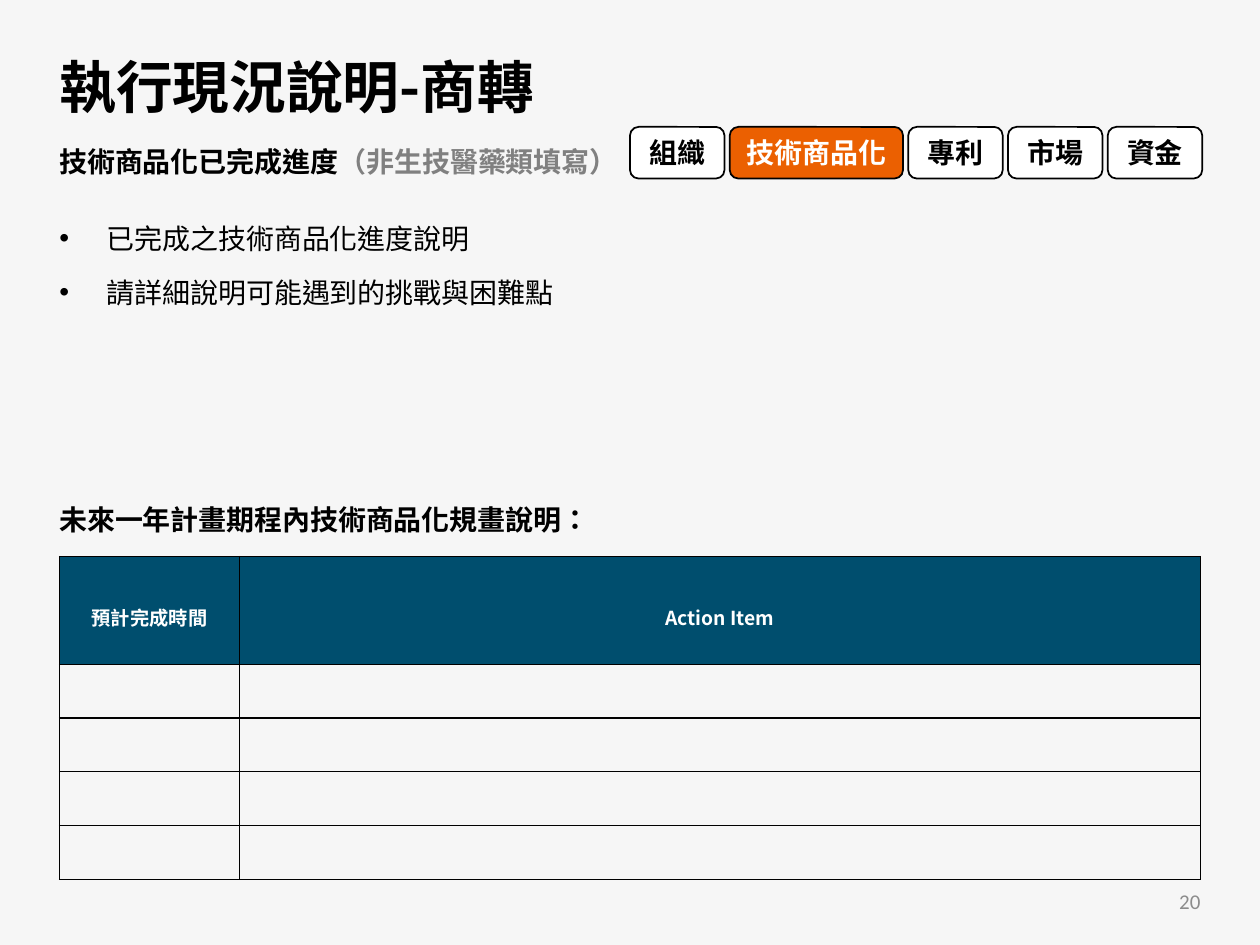
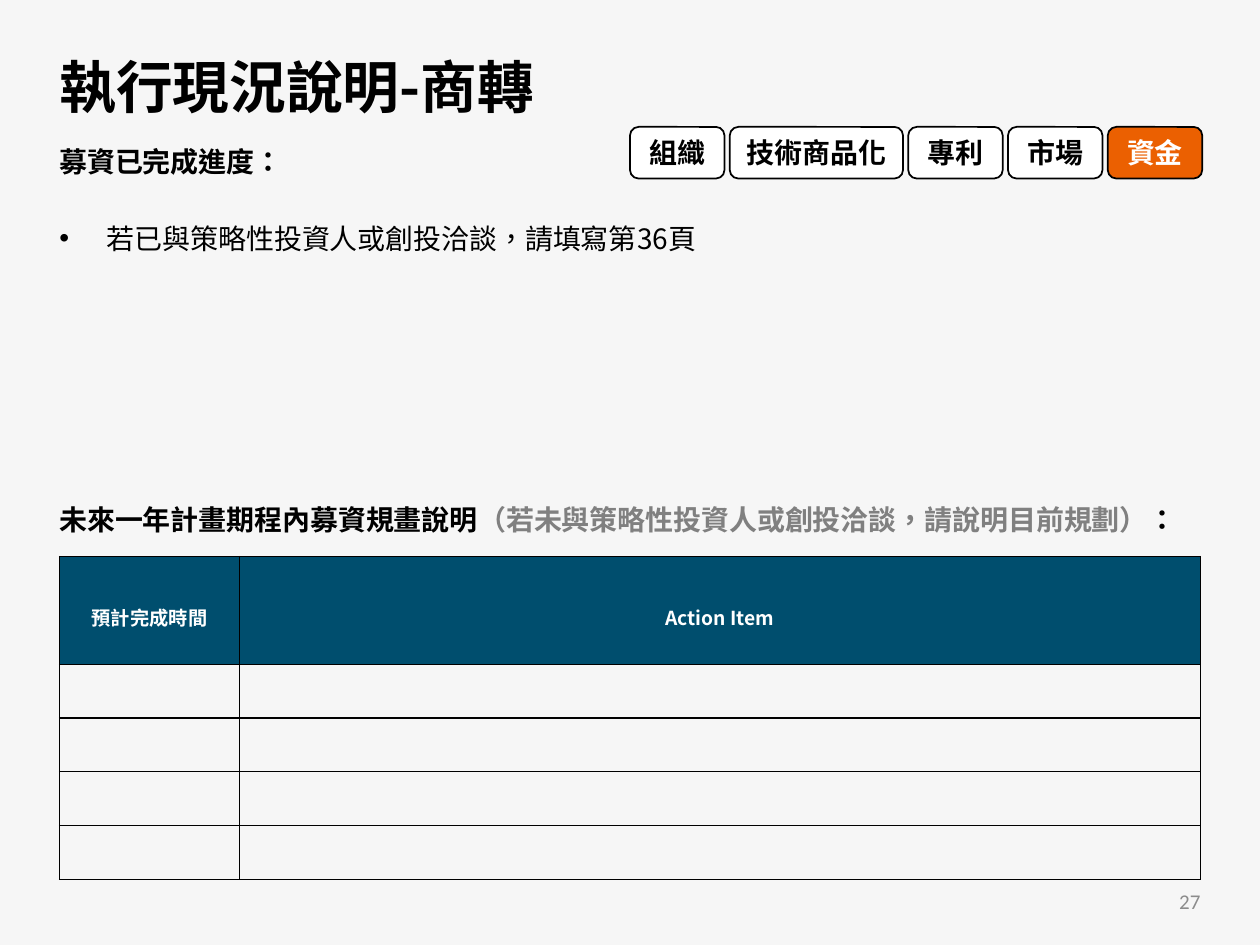
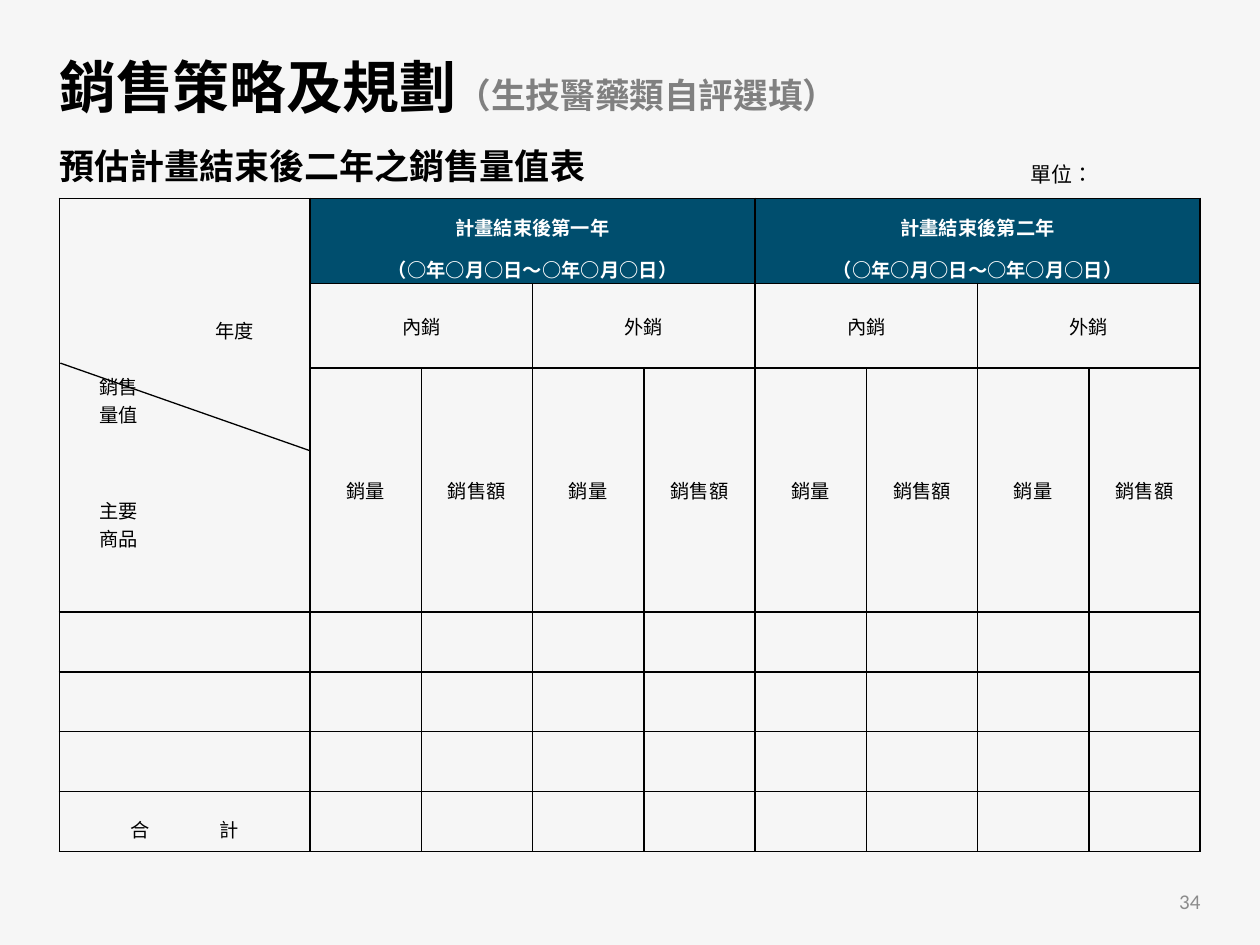
from itertools import groupby

from lxml import etree
from pptx import Presentation
from pptx import util as u
from pptx.dml import color
from pptx.enum import shapes, text
from pptx.oxml import ns

FONT = "Noto Sans CJK SC"
BLACK, WHITE, GRAY = "000000", "FFFFFF", "808080"
PAPER, NAVY, ORANGE, PAGE_GRAY = "F6F6F6", "004E6E", "EB6001", "8C8C8C"
LEFT, CENTER, RIGHT = text.PP_ALIGN.LEFT, text.PP_ALIGN.CENTER, text.PP_ALIGN.RIGHT
TOP, MIDDLE = text.MSO_ANCHOR.TOP, text.MSO_ANCHOR.MIDDLE
TEXT_LEFT, TABLE_LEFT = 26.8, 34
TAGS = ["組織", "技術商品化", "專利", "市場", "資金"]
TITLE = "執行現況說明-商轉"


def rgb(value):
    return color.RGBColor.from_string(value)


def box(left, top, width, height):
    return [u.Pt(value) for value in (left, top, width, height)]


def write(paragraph, content, size=16, ink=BLACK, bold=False, font=FONT, spacing=0):
    run = paragraph.add_run()
    run.text = content
    run.font.size, run.font.bold, run.font.name = u.Pt(size), bold, font
    run.font.color.rgb = rgb(ink)
    properties = run._r.get_or_add_rPr()
    properties.set("lang", "zh-TW")
    if spacing:
        properties.set("spc", str(round(spacing * 100)))
    etree.SubElement(properties, ns.qn("a:ea"), typeface=font)


def arrange(paragraph, align=LEFT, line=1, before=0, after=0, indent=0, hanging=0):
    paragraph.alignment, paragraph.line_spacing = align, line
    paragraph.space_before, paragraph.space_after = u.Pt(before), u.Pt(after)
    properties = paragraph._p.get_or_add_pPr()
    properties.set("marL", str(u.Pt(indent)))
    properties.set("indent", str(-u.Pt(hanging)))


class Deck:
    def __init__(self):
        self.presentation = Presentation()
        self.presentation.slide_width = u.Pt(720)
        self.presentation.slide_height = u.Pt(540)
        fill = self.presentation.slide_master.background.fill
        fill.solid()
        fill.fore_color.rgb = rgb(PAPER)
        self.slide = None

    def start(self, layout, page, title, note=""):
        self.slide = self.presentation.slides.add_slide(self.presentation.slide_layouts[layout])
        shape = self.slide.shapes.title
        shape.left, shape.top, shape.width, shape.height = box(TEXT_LEFT, 16.4, 666, 58)
        frame = shape.text_frame
        frame.auto_size, frame.vertical_anchor = text.MSO_AUTO_SIZE.NONE, MIDDLE
        paragraph = frame.paragraphs[0]
        arrange(paragraph, line=1.2)
        write(paragraph, title, size=32.4, bold=True)
        if note:
            write(paragraph, note, size=19.8, ink=GRAY, bold=True)
        self.label([(page, PAGE_GRAY)], 531, 500.5, 162, 28.8, size=12,
                   font="Calibri", align=RIGHT, anchor=MIDDLE)

    def label(self, parts, left, top, width, height, align=LEFT, anchor=TOP, **style):
        frame = self.slide.shapes.add_textbox(*box(left, top, width, height)).text_frame
        frame.word_wrap, frame.vertical_anchor = True, anchor
        arrange(frame.paragraphs[0], align)
        for content, ink in parts:
            write(frame.paragraphs[0], content, ink=ink, **style)

    def heading(self, top, *parts):
        self.label(parts, TEXT_LEFT, top, 682, 26.6, bold=True)

    def bullets(self, items, height):
        shape = self.slide.placeholders[1]
        shape.left, shape.top, shape.width, shape.height = box(TEXT_LEFT, 113.4, 665, height)
        frame = shape.text_frame
        frame.auto_size = text.MSO_AUTO_SIZE.NONE
        for index, item in enumerate(items):
            paragraph = frame.add_paragraph() if index else frame.paragraphs[0]
            arrange(paragraph, line=1.5, after=2, indent=27, hanging=27)
            write(paragraph, item)

    def tags(self, active):
        group = self.slide.shapes.add_group_shape()
        left = 360
        for name in TAGS:
            width = 99 if len(name) > 2 else 54
            shape = group.shapes.add_shape(shapes.MSO_SHAPE.ROUNDED_RECTANGLE,
                                           *box(left, 72.5, width, 29.5))
            shape.shadow.inherit = False
            shape.fill.solid()
            shape.fill.fore_color.rgb = rgb(ORANGE if name == active else WHITE)
            shape.line.color.rgb, shape.line.width = rgb(BLACK), u.Pt(1)
            shape.text_frame.vertical_anchor = MIDDLE
            paragraph = shape.text_frame.paragraphs[0]
            arrange(paragraph, CENTER)
            write(paragraph, name, ink=WHITE if name == active else BLACK, bold=True)
            left += width + 3

    def table(self, top, columns, rows, border, margin):
        frame = self.slide.shapes.add_table(len(rows), len(columns),
                                            *box(TABLE_LEFT, top, sum(columns), sum(rows)))
        table = frame.table
        table.first_row = table.horz_banding = False
        for column, width in zip(table.columns, columns):
            column.width = u.Pt(width)
        for row, height in zip(table.rows, rows):
            row.height = u.Pt(height)
        for cell in table.iter_cells():
            cell.margin_left = cell.margin_right = u.Pt(margin)
            cell.margin_top = cell.margin_bottom = 0
            cell.vertical_anchor = MIDDLE
            properties = cell._tc.get_or_add_tcPr()
            for side in ("lnL", "lnR", "lnT", "lnB"):
                line = etree.SubElement(properties, ns.qn("a:" + side), w=str(u.Pt(border)))
                fill = etree.SubElement(line, ns.qn("a:solidFill"))
                etree.SubElement(fill, ns.qn("a:srgbClr"), val=BLACK)
            cell.fill.background()
        return table

    def open_border(self, upper, lower):
        for cell, side in ((upper, "lnB"), (lower, "lnT")):
            line = cell._tc.get_or_add_tcPr().find(ns.qn("a:" + side))
            line.remove(line[0])
            etree.SubElement(line, ns.qn("a:noFill"))

    def cell(self, cell, content, line=1):
        paragraph = cell.text_frame.paragraphs[0]
        arrange(paragraph, CENTER, line)
        write(paragraph, content, size=11)

    def corner(self, cell, lines, top, anchor):
        cell.vertical_anchor, cell.margin_top = anchor, u.Pt(top)
        for index, (content, indent, before) in enumerate(lines):
            frame = cell.text_frame
            paragraph = frame.add_paragraph() if index else frame.paragraphs[0]
            arrange(paragraph, before=before, indent=indent)
            write(paragraph, content, size=11)

    def header(self, cell, *lines):
        cell.fill.solid()
        cell.fill.fore_color.rgb = rgb(NAVY)
        for index, content in enumerate(lines):
            paragraph = cell.text_frame.add_paragraph() if index else cell.text_frame.paragraphs[0]
            arrange(paragraph, CENTER, 1.5)
            for tight, letters in groupby(content, lambda letter: letter in "（年月～）" and index > 0):
                write(paragraph, "".join(letters), size=11, ink=WHITE, bold=True,
                      spacing=-1 if tight else 0)

    def line(self, *ends):
        connector = self.slide.shapes.add_connector(shapes.MSO_CONNECTOR.STRAIGHT, *box(*ends))
        connector.line.color.rgb, connector.line.width = rgb(BLACK), u.Pt(0.75)
        etree.SubElement(connector._element.spPr, ns.qn("a:effectLst"))

    def progress(self, page, active, done, items, height, plan):
        self.start(1, page, TITLE)
        self.tags(active)
        self.heading(79, *done)
        self.bullets(items, height)
        self.heading(283.7, *plan)
        table = self.table(318, [103, 549], [61.5] + [30.8] * 4, 0.75, 4.5)
        for index, name in enumerate(["預計完成時間", "Action Item"]):
            self.header(table.cell(0, index), name)

    def sales(self):
        self.start(5, "34", "銷售策略及規劃", "（生技醫藥類自評選填）")
        self.label([("預估計畫結束後二年之銷售量值表", BLACK)], TEXT_LEFT, 79, 394, 31.5,
                   size=20, bold=True)
        table = self.table(113.4, [143.2] + [63.6] * 8, [48.5, 48.5, 139.3] + [34.25] * 4, 1, 0.7)
        for row in range(2):
            self.open_border(table.cell(row, 0), table.cell(row + 1, 0))
        self.corner(table.cell(1, 0), [("年度", 88.5, 0)], 5, MIDDLE)
        self.corner(table.cell(2, 0), [("銷售", 22, 0), ("量值", 22, 0),
                                       ("主要", 22, 39), ("商品", 22, 0)], 2, TOP)
        for column, year in ((1, "一"), (5, "二")):
            table.cell(0, column).merge(table.cell(0, column + 3))
            self.header(table.cell(0, column), f"計畫結束後第{year}年", "（○年○月○日～○年○月○日）")
        for column in range(1, 9, 2):
            table.cell(1, column).merge(table.cell(1, column + 1))
            self.cell(table.cell(1, column), "內銷" if column % 4 == 1 else "外銷")
            self.cell(table.cell(2, column), "銷量")
            self.cell(table.cell(2, column + 1), "銷售額")
        total = table.cell(6, 0).text_frame.paragraphs[0]
        arrange(total, CENTER, 1.5)
        write(total, "合", size=11, spacing=40)
        write(total, "計", size=11)
        self.line(34.5, 207.5, 177, 257.5)
        self.label([("單位：", BLACK)], 581.8, 88.5, 105, 21.6, size=12)


def main():
    deck = Deck()
    deck.progress("20", "技術商品化",
                  [("技術商品化已完成進度", BLACK), ("（非生技醫藥類填寫）", GRAY)],
                  ["已完成之技術商品化進度說明", "請詳細說明可能遇到的挑戰與困難點"], 130,
                  [("未來一年計畫期程內技術商品化規畫說明：", BLACK)])
    deck.progress("27", "資金",
                  [("募資已完成進度：", BLACK)],
                  ["若已與策略性投資人或創投洽談，請填寫第36頁"], 162,
                  [("未來一年計畫期程內募資規畫說明", BLACK),
                   ("（若未與策略性投資人或創投洽談，請說明目前規劃）", GRAY), ("：", BLACK)])
    deck.sales()
    deck.presentation.save("out.pptx")


if __name__ == "__main__":
    main()
